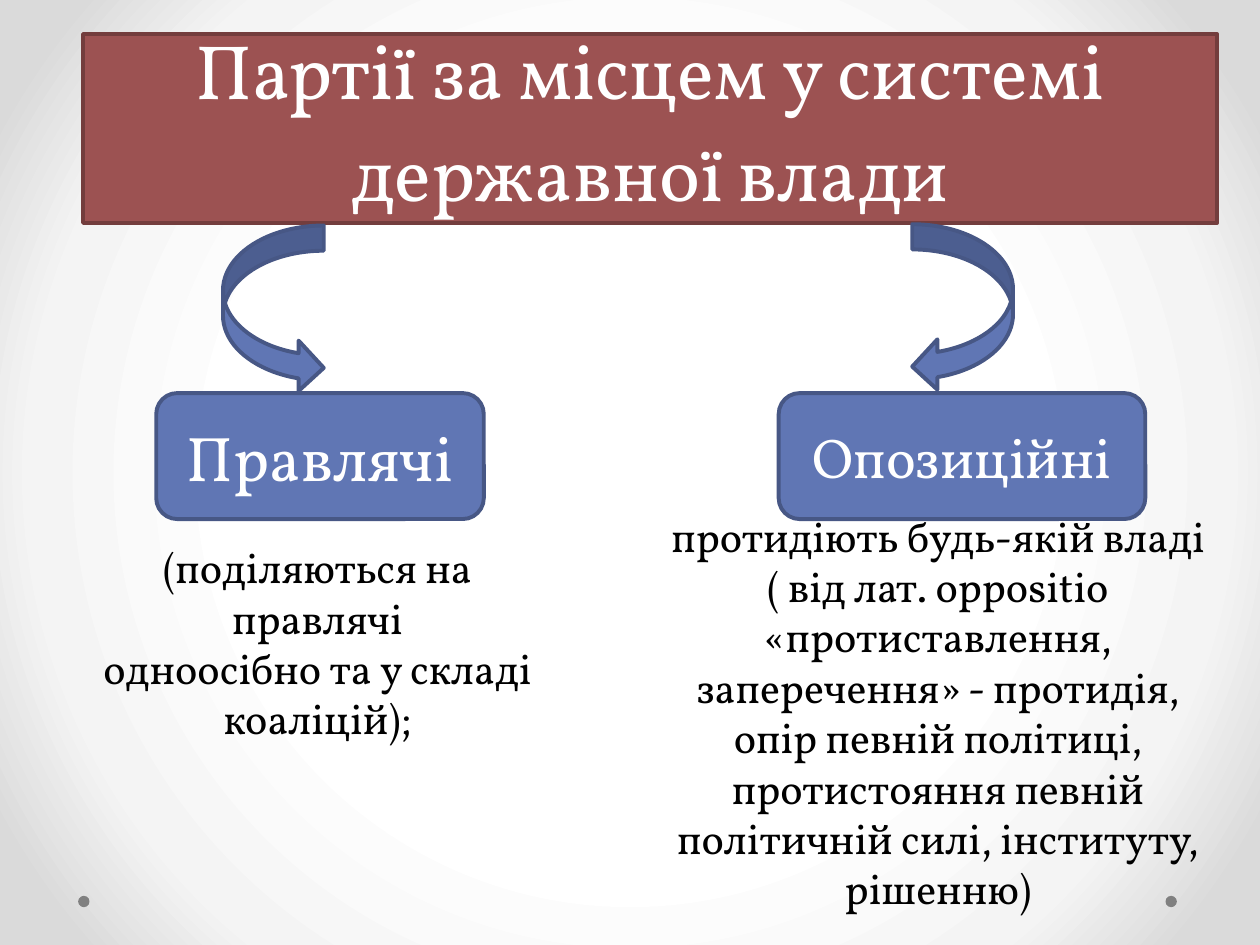
from dataclasses import dataclass

from lxml.etree import SubElement
from pptx import Presentation
from pptx.dml.color import RGBColor
from pptx.enum.shapes import MSO_SHAPE
from pptx.enum.text import MSO_ANCHOR, MSO_AUTO_SIZE, PP_ALIGN
from pptx.oxml.ns import qn
from pptx.util import Inches, Pt

COLS, ROWS = 100, 75  # grid over the whole slide
WIDTH, HEIGHT = Inches(10), Inches(7.5)
FONT = "Vollkorn"
WHITE, BLACK, GREY = "FFFFFF", "000000", "808080"
RED, MAROON = "9C5252", "733D3D"
BLUE, NAVY = "6076B4", "475785"


@dataclass
class Area:
    col: float
    row: float
    cols: float
    rows: float

    def place(self) -> tuple:
        across, down = WIDTH / COLS, HEIGHT / ROWS
        return (int(self.col * across), int(self.row * down),
                int(self.cols * across), int(self.rows * down))


@dataclass
class Branch:
    arrow: MSO_SHAPE
    bend: Area
    box: Area
    name: str
    size: int
    note: Area
    lines: list


BRANCHES = [
    Branch(MSO_SHAPE.CURVED_RIGHT_ARROW, Area(17.7, 17.9, 8, 13.3),
           Area(12.4, 31.2, 26, 10), "Правлячі", 36,
           Area(5.1, 42.5, 40.2, 17.2),
           ["(поділяються на правлячі", "одноосібно та у складі коаліцій);"]),
    Branch(MSO_SHAPE.CURVED_LEFT_ARROW, Area(72.4, 17.8, 8, 13.3),
           Area(61.8, 31.2, 29.1, 10), "Опозиційні", 32,
           Area(51.6, 40, 45.7, 33.3),
           ["протидіють будь-якій владі",
            "( від лат. oppositio «протиставлення,",
            "заперечення» - протидія, опір певній політиці, "
            "протистояння певній політичній силі, інституту, рішенню)"]),
]


def rgb(code: str) -> RGBColor:
    return RGBColor.from_string(code)


def paint(shape, fill: str, line: str = "") -> None:
    shape.fill.solid()
    shape.fill.fore_color.rgb = rgb(fill)
    if line:
        shape.line.color.rgb = rgb(line)
        shape.line.width = Pt(2.25)
    else:
        shape.line.fill.background()


def write(shape, lines: list, size: int, color: str = WHITE,
          anchor=MSO_ANCHOR.MIDDLE, fit=MSO_AUTO_SIZE.NONE,
          pitch: int = 0) -> None:
    frame = shape.text_frame
    frame.word_wrap = True
    frame.auto_size = fit
    frame.vertical_anchor = anchor
    frame.text = "\n".join(lines)
    for para in frame.paragraphs:
        para.alignment = PP_ALIGN.CENTER
        if pitch:
            para.line_spacing = Pt(pitch)
        para.font.name = FONT
        para.font.size = Pt(size)
        para.font.color.rgb = rgb(color)


def draw(slide, kind: MSO_SHAPE, area: Area, fill: str, line: str = ""):
    shape = slide.shapes.add_shape(kind, *area.place())
    shape.shadow.inherit = False
    paint(shape, fill, line)
    return shape


def shade(slide, stops: list) -> None:
    """Radial backdrop, from the centre outwards."""
    slide.background.fill.gradient()
    grad = slide.background._cSld.find(".//" + qn("a:gradFill"))
    for part in list(grad):
        grad.remove(part)
    steps = SubElement(grad, qn("a:gsLst"))
    for share, code in stops:
        stop = SubElement(steps, qn("a:gs"), pos=str(share * 1000))
        SubElement(stop, qn("a:srgbClr"), val=code)
    ring = SubElement(grad, qn("a:path"), path="circle")
    SubElement(ring, qn("a:fillToRect"),
               {side: "50000" for side in "ltrb"})


def show(slide, branch: Branch) -> None:
    draw(slide, branch.arrow, branch.bend, BLUE, NAVY)
    box = draw(slide, MSO_SHAPE.ROUNDED_RECTANGLE, branch.box, BLUE, NAVY)
    write(box, [branch.name], branch.size)
    note = slide.shapes.add_textbox(*branch.note.place())
    write(note, branch.lines, 24, color=BLACK, anchor=MSO_ANCHOR.TOP,
          fit=MSO_AUTO_SIZE.SHAPE_TO_FIT_TEXT)


def main() -> None:
    deck = Presentation()
    deck.slide_width, deck.slide_height = WIDTH, HEIGHT
    slide = deck.slides.add_slide(deck.slide_layouts[5])

    # Backdrop and corner dots
    shade(slide, [(50, WHITE), (76, "F4F4F4"), (92, "DADADA")])
    for col in (92.5, 6.2):
        draw(slide, MSO_SHAPE.OVAL, Area(col, 71.1, 0.9, 0.9), GREY)

    # Title
    title = slide.shapes.title
    title.left, title.top, title.width, title.height = Area(
        6.6, 2.7, 90, 15).place()
    paint(title, RED, MAROON)
    write(title, ["Партії за місцем у системі державної влади"], 44,
          anchor=MSO_ANCHOR.BOTTOM, pitch=58)

    # Two kinds of parties
    for branch in BRANCHES:
        show(slide, branch)

    deck.save("out.pptx")


if __name__ == "__main__":
    main()
